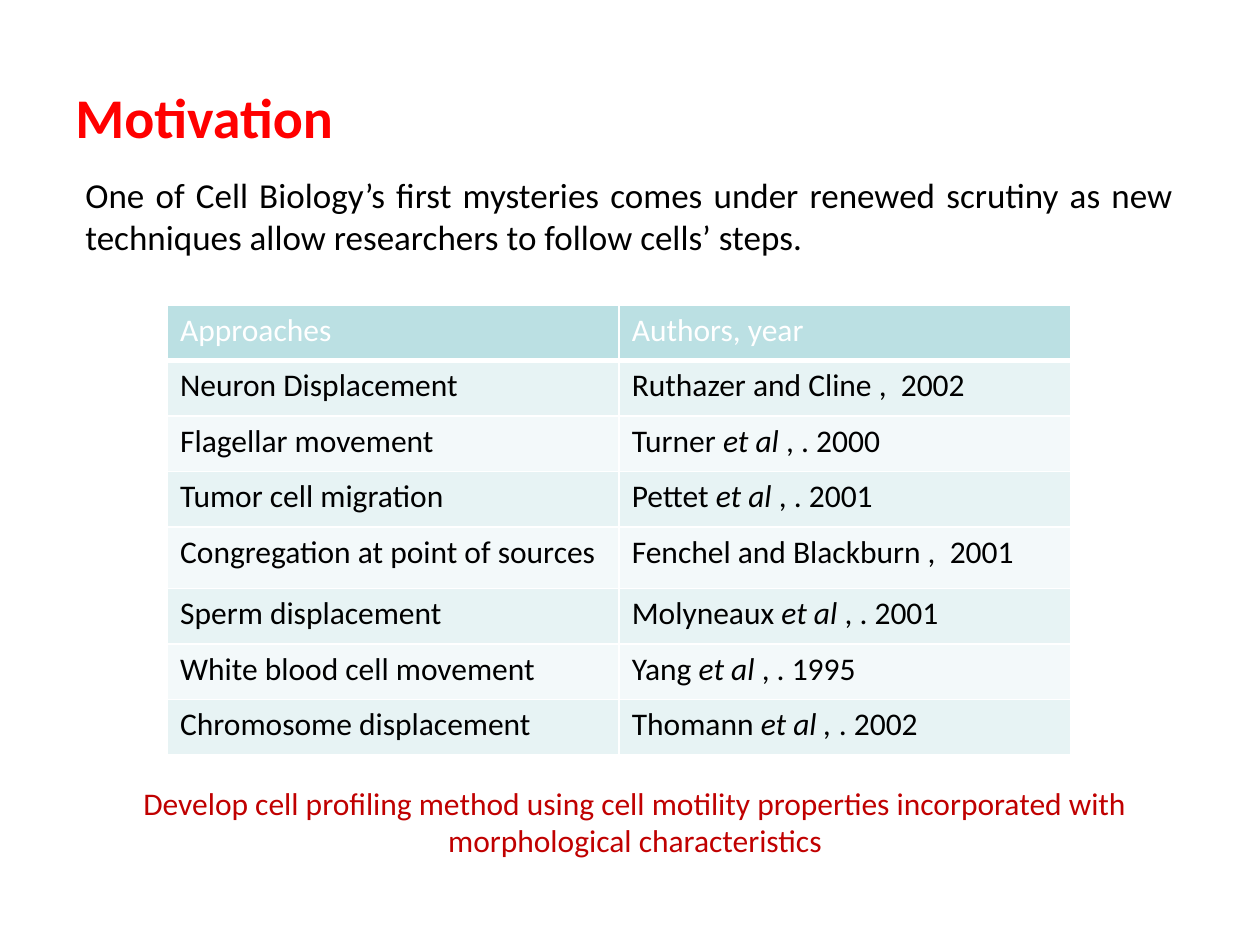
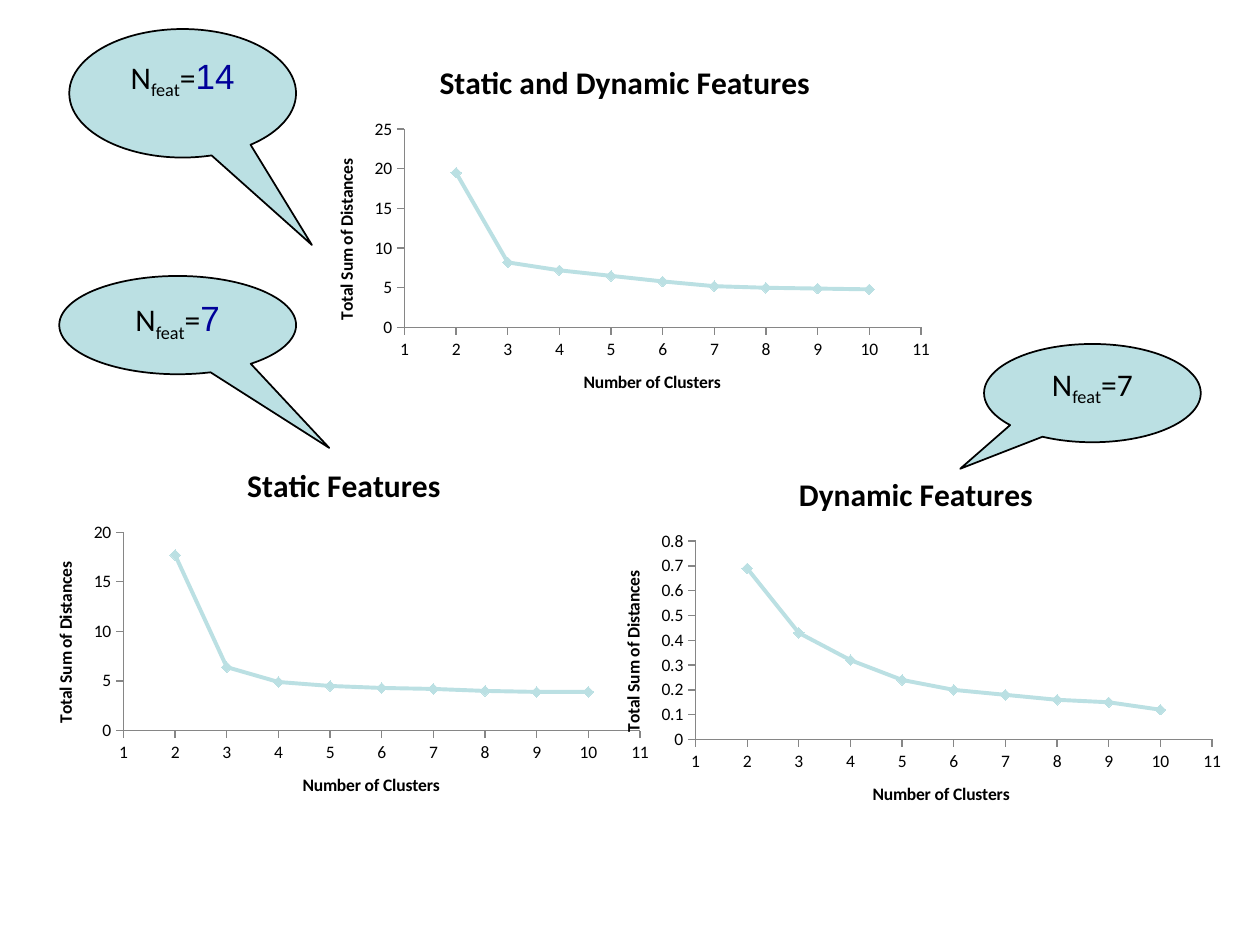
from pptx import Presentation
from pptx.chart.data import XyChartData
from pptx.dml.color import RGBColor
from pptx.enum.chart import XL_CHART_TYPE as ChartType, XL_MARKER_STYLE as Marker, XL_TICK_MARK as Tick
from pptx.enum.shapes import MSO_SHAPE as Shape
from pptx.enum.text import MSO_ANCHOR as Anchor, PP_ALIGN as Align
from pptx.oxml import parse_xml
from pptx.oxml.ns import nsdecls
from pptx.util import Inches, Pt

SLIDE_WIDTH, SLIDE_HEIGHT = Inches(10), Inches(7.5)
BODY_FONT, NUMBER_FONT = "Calibri", "Arial"
BLACK, WHITE, RED, DARK_RED = "000000", "FFFFFF", "FF0000", "C00000"
TEAL, BAND_DARK, BAND_LIGHT = "BBE0E3", "E7F3F4", "F3F9FA"
NAVY, AXIS_GRAY = "000099", "868686"

APPROACHES = [
    ("Approaches", ["Authors, year"]),
    ("Neuron Displacement", ["Ruthazer and Cline ,  2002"]),
    ("Flagellar movement", ["Turner ", "et al ", ", . 2000"]),
    ("Tumor cell migration", ["Pettet ", "et al ", ", . 2001"]),
    ("Congregation at point of sources", ["Fenchel and Blackburn ,  2001"]),
    ("Sperm displacement", ["Molyneaux ", "et al ", ", . 2001"]),
    ("White blood cell movement", ["Yang ", "et al ", ", . 1995"]),
    ("Chromosome displacement", ["Thomann ", "et al , ", ". 2002"]),
]
ROW_HEIGHT, TALL_ROW_HEIGHT, TALL_ROW = 5.87, 6.53, 4

CLUSTER_CHARTS = [
    ("Static and Dynamic Features", (24.6, 4.27), 25, 5,
     [19.5, 8.2, 7.2, 6.5, 5.8, 5.2, 5, 4.9, 4.8]),
    ("Static Features", (2.3, 46.93), 20, 5,
     [17.7, 6.4, 4.9, 4.5, 4.3, 4.2, 4, 3.9, 3.9]),
    ("Dynamic Features", (47.7, 47.87), 0.8, 0.1,
     [0.69, 0.43, 0.32, 0.24, 0.2, 0.18, 0.16, 0.15, 0.12]),
]
HIGHLIGHT, PLAIN = (20, NUMBER_FONT, NAVY), (18, BODY_FONT, BLACK)
FEATURE_COUNTS = [
    ("14", HIGHLIGHT, (5.5, 3.07, 18, 13.6), (0.57, 1.18)),
    ("7", HIGHLIGHT, (4.7, 29.2, 18.8, 10.4), (0.64, 1.25)),
    ("7", PLAIN, (78.1, 36.4, 17.2, 10.4), (-0.61, 0.77)),
]


def rgb(code):
    return RGBColor.from_string(code)


def across(percent):
    return int(SLIDE_WIDTH * percent / 100)


def down(percent):
    return int(SLIDE_HEIGHT * percent / 100)


def box(left, top, width, height):
    return across(left), down(top), across(width), down(height)


def style(font, size, name=BODY_FONT, color=BLACK, bold=None):
    font.size, font.name, font.bold = Pt(size), name, bold
    font.color.rgb = rgb(color)


def add_text(slide, area, text, size, color=BLACK, align=Align.LEFT, bold=None, anchor=Anchor.TOP):
    frame = slide.shapes.add_textbox(*box(*area)).text_frame
    frame.word_wrap = True
    frame.vertical_anchor = anchor
    paragraph = frame.paragraphs[0]
    paragraph.text, paragraph.alignment = text, align
    style(paragraph.font, size, color=color, bold=bold)


def set_borders(cell, bottom_width):
    properties = cell._tc.get_or_add_tcPr()
    widths = {"L": 1, "R": 1, "T": 1, "B": bottom_width}
    for index, (side, width) in enumerate(widths.items()):
        properties.insert(index, parse_xml(
            f'<a:ln{side} {nsdecls("a")} w="{Pt(width)}"><a:solidFill>'
            f'<a:srgbClr val="{WHITE}"/></a:solidFill></a:ln{side}>'))


def fill_cell(cell, pieces, row):
    paragraph = cell.text_frame.paragraphs[0]
    for index, piece in enumerate(pieces):
        run = paragraph.add_run()
        run.text = piece
        if index == 1:
            run.font.italic = True
    style(paragraph.font, 18, color=BLACK if row else WHITE)
    band = BAND_DARK if row % 2 else BAND_LIGHT
    cell.fill.solid()
    cell.fill.fore_color.rgb = rgb(band if row else TEAL)
    set_borders(cell, 1 if row else 3)


def add_approaches(slide):
    heights = [ROW_HEIGHT] * len(APPROACHES)
    heights[TALL_ROW] = TALL_ROW_HEIGHT
    area = box(13.3, 32.27, 71.7, sum(heights))
    table = slide.shapes.add_table(len(APPROACHES), 2, *area).table
    for row, (approach, authors) in enumerate(APPROACHES):
        table.rows[row].height = down(heights[row])
        fill_cell(table.cell(row, 0), [approach], row)
        fill_cell(table.cell(row, 1), authors, row)


def set_axis(axis, title, low, high, step):
    axis.minimum_scale, axis.maximum_scale, axis.major_unit = low, high, step
    axis.has_major_gridlines = False
    axis.major_tick_mark, axis.minor_tick_mark = Tick.OUTSIDE, Tick.NONE
    axis.format.line.color.rgb = rgb(AXIS_GRAY)
    style(axis.tick_labels.font, 10)
    heading = axis.axis_title.text_frame
    heading.text = title
    style(heading.paragraphs[0].font, 10, bold=True)


def set_plot_layout(chart, x, y, width, height):
    plot_area = chart._chartSpace.chart.plotArea
    for layout in plot_area.xpath("c:layout"):
        plot_area.remove(layout)
    sizes = "".join(f'<c:{key} val="{value}"/>'
                    for key, value in zip("xywh", (x, y, width, height)))
    plot_area.insert(0, parse_xml(
        f'<c:layout {nsdecls("c")}><c:manualLayout><c:layoutTarget val="inner"/>'
        f'<c:xMode val="edge"/><c:yMode val="edge"/>{sizes}</c:manualLayout></c:layout>'))


def add_cluster_chart(slide, title, corner, top_value, step, distances):
    data = XyChartData()
    points = data.add_series("Series 1")
    for clusters, distance in enumerate(distances, start=2):
        points.add_data_point(clusters, distance)
    chart = slide.shapes.add_chart(ChartType.XY_SCATTER_LINES, *box(*corner, 50, 40), data).chart
    style(chart.font, 10)
    chart.has_legend = False
    chart.has_title = True
    chart.chart_title.text_frame.text = title
    style(chart.chart_title.text_frame.paragraphs[0].font, 18, bold=True)
    set_axis(chart.category_axis, "Number of Clusters", 1, 11, 1)
    set_axis(chart.value_axis, "Total Sum of Distances", 0, top_value, step)
    set_plot_layout(chart, 0.15, 0.235, 0.82, 0.525)
    chart.plots[0].vary_by_categories = False
    series = chart.plots[0].series[0]
    series.smooth = False
    series.format.line.width = Pt(2.25)
    series.format.line.color.rgb = rgb(TEAL)
    series.marker.style, series.marker.size = Marker.DIAMOND, 6
    series.marker.format.fill.solid()
    series.marker.format.fill.fore_color.rgb = rgb(TEAL)
    series.marker.format.line.color.rgb = rgb(TEAL)


def add_feature_count(slide, count, count_style, area, tip):
    callout = slide.shapes.add_shape(Shape.OVAL_CALLOUT, *box(*area))
    callout.adjustments[0], callout.adjustments[1] = tip
    callout.shadow.inherit = False
    callout.fill.solid()
    callout.fill.fore_color.rgb = rgb(TEAL)
    callout.line.color.rgb, callout.line.width = rgb(BLACK), Pt(1)
    callout.text_frame.vertical_anchor = Anchor.TOP
    paragraph = callout.text_frame.paragraphs[0]
    paragraph.alignment = Align.CENTER
    for text, look in [("N", PLAIN), ("feat", PLAIN), ("=", PLAIN), (count, count_style)]:
        run = paragraph.add_run()
        run.text = text
        style(run.font, *look)
        if text == "feat":
            run._r.get_or_add_rPr().set("baseline", "-25000")


def add_motivation(slide):
    add_text(slide, (5, 4, 90, 16.67), "Motivation", 32, RED, bold=True, anchor=Anchor.MIDDLE)
    add_text(slide, (5.8, 17.73, 88.3, 10.27),
             "One of Cell Biology’s first mysteries comes under renewed scrutiny as new "
             "techniques allow researchers to follow cells’ steps.", 20, align=Align.JUSTIFY)
    add_approaches(slide)
    add_text(slide, (8.3, 82.27, 84.2, 9.47),
             "Develop cell profiling method using cell motility properties incorporated with "
             "morphological characteristics", 18, DARK_RED, Align.CENTER)


def add_cluster_comparison(slide):
    for chart in CLUSTER_CHARTS:
        add_cluster_chart(slide, *chart)
    for feature_count in FEATURE_COUNTS:
        add_feature_count(slide, *feature_count)


def main():
    deck = Presentation()
    deck.slide_width, deck.slide_height = SLIDE_WIDTH, SLIDE_HEIGHT
    for build in (add_motivation, add_cluster_comparison):
        build(deck.slides.add_slide(deck.slide_layouts[6]))
    deck.save("out.pptx")


if __name__ == "__main__":
    main()
